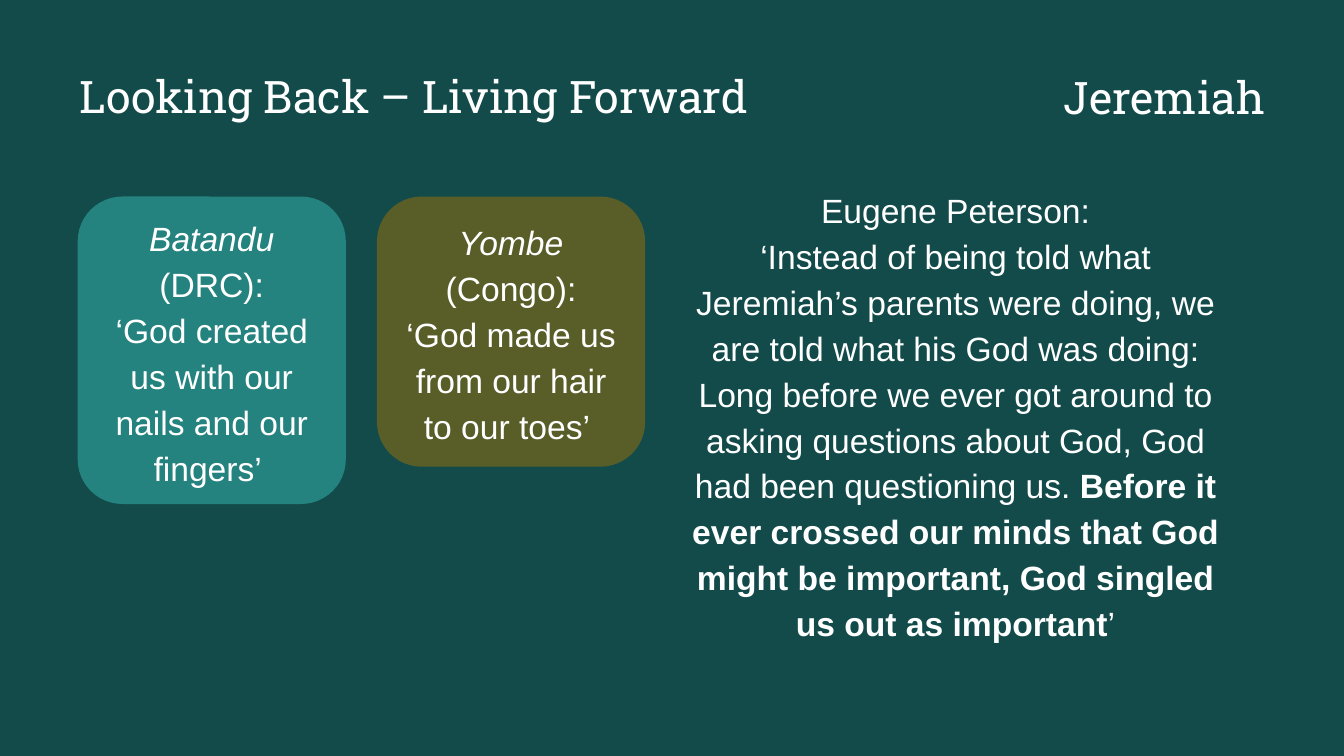
"""Build the Jeremiah slide with two sayings and a quotation."""
from pptx import Presentation
from pptx import util as u
from pptx.dml.color import RGBColor
from pptx.enum import shapes, text

WIDTH, HEIGHT = u.Inches(13.33), u.Inches(7.5)
HEADING = {"name": "Roboto Slab", "size": u.Pt(32), "bold": False}
BODY = {"name": "Arial", "size": u.Pt(24)}
ITALIC = {"italic": True}
BOLD = {"bold": True}

CARD_LEFT, CARD_TOP, CARD_WIDTH, CARD_PITCH = 5.78, 26, 19.95, 22.27
CARDS = [
    ("24827F", 40.67, [
        [("Batandu ", ITALIC), ("(DRC):", {})],
        [("‘God created us with our nails and our fingers’ ", {})],
    ]),
    ("595E29", 35.73, [
        [("Yombe", ITALIC), (" (Congo):", {})],
        [("‘God made us from our hair to our toes’ ", {})],
    ]),
]
QUOTE = [
    [("Eugene Peterson:", {})],
    [("‘Instead of being told what Jeremiah’s parents were doing, we are told "
      "what his God was doing: Long before we ever got around to asking "
      "questions about God, God had been questioning us. ", {}),
     ("Before it ever crossed our minds that God might be important, "
      "God singled us out as important", BOLD),
     ("’", {})],
]


def paint(color_format, color):
    """Set a colour format to a hex colour."""
    color_format.rgb = RGBColor.from_string(color)


def fill_solid(fill, color):
    """Give a fill one solid hex colour."""
    fill.solid()
    paint(fill.fore_color, color)


def apply(target, values):
    """Set every attribute named in a dict of format values."""
    for name, value in values.items():
        setattr(target, name, value)


def area(left, top, width, height):
    """Turn percentages of the slide into a position and a size."""
    return (round(WIDTH * left / 100), round(HEIGHT * top / 100),
            round(WIDTH * width / 100), round(HEIGHT * height / 100))


def add_run(paragraph, words, values):
    """Add a white run with the given font values."""
    run = paragraph.add_run()
    run.text = words
    apply(run.font, values)
    paint(run.font.color, "FFFFFF")


def write_heading(shape, words, alignment):
    """Write a heading without margins into a shape."""
    frame = shape.text_frame
    apply(frame, {"margin_left": 0, "margin_top": 0, "margin_right": 0,
                  "margin_bottom": 0, "word_wrap": True,
                  "auto_size": text.MSO_AUTO_SIZE.NONE,
                  "vertical_anchor": text.MSO_ANCHOR.TOP})
    paragraph = frame.paragraphs[0]
    paragraph.alignment = alignment
    add_run(paragraph, words, HEADING)


def add_panel(slide, box, paragraphs, color=None):
    """Add a rounded panel of centred text, filled if a colour is given."""
    shape = slide.shapes.add_shape(shapes.MSO_SHAPE.ROUNDED_RECTANGLE, *area(*box))
    shape.shadow.inherit = False
    shape.line.fill.background()
    if color:
        fill_solid(shape.fill, color)
    else:
        shape.fill.background()
    frame = shape.text_frame
    apply(frame, {"word_wrap": True, "vertical_anchor": text.MSO_ANCHOR.MIDDLE})
    for index, runs in enumerate(paragraphs):
        paragraph = frame.add_paragraph() if index else frame.paragraphs[0]
        apply(paragraph, {"alignment": text.PP_ALIGN.CENTER, "line_spacing": 1.14})
        for words, emphasis in runs:
            add_run(paragraph, words, {**BODY, **emphasis})


def main():
    """Build and save the slide."""
    presentation = Presentation()
    apply(presentation, {"slide_width": WIDTH, "slide_height": HEIGHT})
    slide = presentation.slides.add_slide(presentation.slide_layouts[5])
    fill_solid(slide.background.fill, "134B4B")

    title = slide.shapes.title
    left, top, width, height = area(5.93, 9.07, 50.1, 9.07)
    apply(title, {"left": left, "top": top, "width": width, "height": height})
    write_heading(title, "Looking Back – Living Forward", text.PP_ALIGN.LEFT)
    book = slide.shapes.add_textbox(*area(78.75, 9.2, 15.38, 9.07))
    write_heading(book, "Jeremiah", text.PP_ALIGN.RIGHT)

    for column, (color, height, paragraphs) in enumerate(CARDS):
        box = (CARD_LEFT + column * CARD_PITCH, CARD_TOP, CARD_WIDTH, height)
        add_panel(slide, box, paragraphs, color)
    add_panel(slide, (48, 22.4, 46.2, 64.67), QUOTE)
    presentation.save("out.pptx")


if __name__ == "__main__":
    main()
